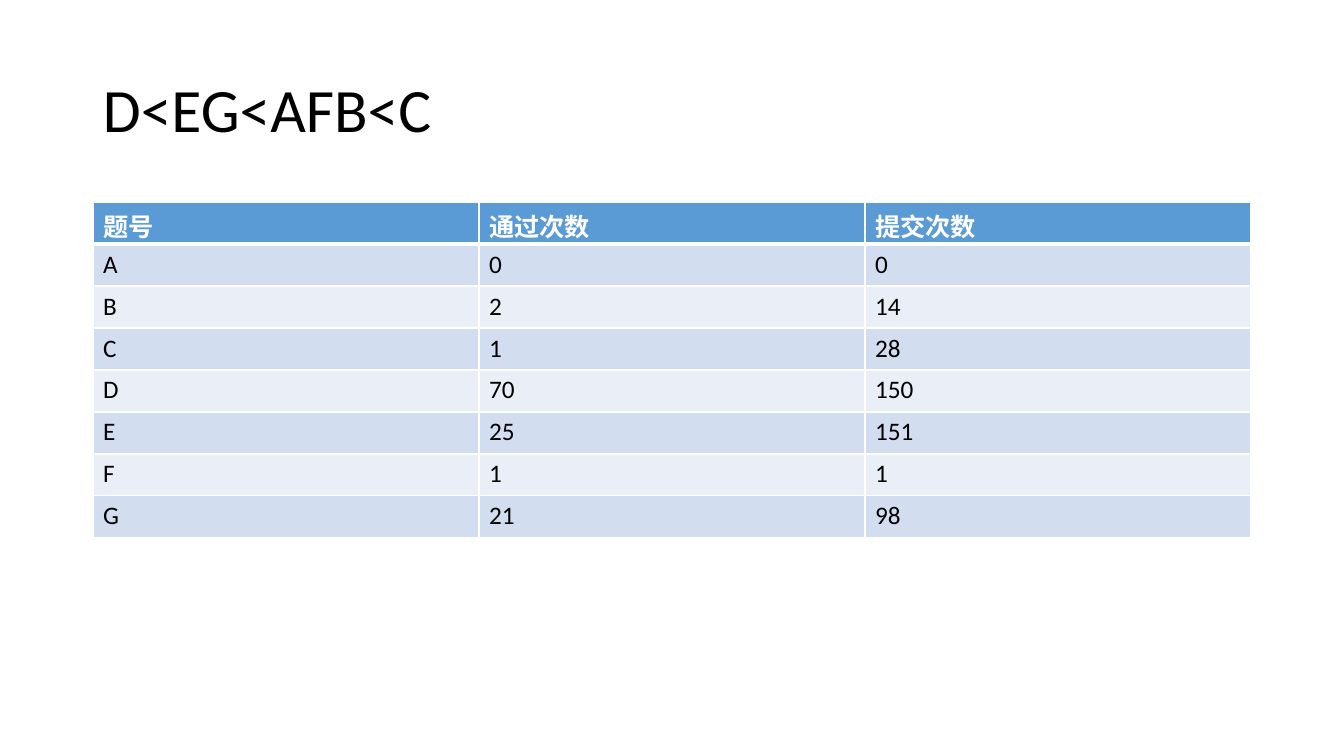
from lxml.etree import SubElement
from pptx import Presentation
from pptx.dml.color import RGBColor
from pptx.enum.text import MSO_ANCHOR
from pptx.oxml.ns import qn
from pptx.util import Emu, Pt

COLORS = {
    "black": "000000",
    "white": "FFFFFF",
    "header": "5B9BD5",
    "odd": "D2DEEF",
    "even": "EAEFF7",
}


def px(length):
    return Emu(round(length * 914400 / 100.8))


def write(frame, text, size=18, color="black", bold=False, spacing=1.0):
    paragraph = frame.paragraphs[0]
    paragraph.line_spacing = spacing
    run = paragraph.add_run()
    run.text = text
    run.font.name = "Calibri"
    run.font.size = Pt(size)
    run.font.bold = bold
    run.font.color.rgb = RGBColor.from_string(COLORS[color])


deck = Presentation()
deck.slide_width, deck.slide_height = px(1344), px(756)
slide = deck.slides.add_slide(deck.slide_layouts[6])

difficulty_order = slide.shapes.add_textbox(px(93), px(40), px(1159), px(146)).text_frame
difficulty_order.word_wrap = True
difficulty_order.vertical_anchor = MSO_ANCHOR.MIDDLE
write(difficulty_order, "D<EG<AFB<C", size=44, spacing=0.9)

results = [
    ("题号", "通过次数", "提交次数"),
    ("A", 0, 0),
    ("B", 2, 14),
    ("C", 1, 28),
    ("D", 70, 150),
    ("E", 25, 151),
    ("F", 1, 1),
    ("G", 21, 98),
]
submissions = slide.shapes.add_table(
    len(results), 3, px(93), px(202), px(3 * 386), px(len(results) * 42)
).table
for column in submissions.columns:
    column.width = px(386)

for row_index, result in enumerate(results):
    submissions.rows[row_index].height = px(42)
    is_header = row_index == 0
    fill = "header" if is_header else "odd" if row_index % 2 else "even"
    for column_index, value in enumerate(result):
        cell = submissions.cell(row_index, column_index)
        write(cell.text_frame, str(value), color="white" if is_header else "black", bold=is_header)
        properties = cell._tc.get_or_add_tcPr()
        for side in "LRTB":
            heavy = (row_index, side) in ((0, "B"), (1, "T"))
            border = SubElement(properties, qn(f"a:ln{side}"), w=str(Pt(3 if heavy else 1)))
            border_fill = SubElement(border, qn("a:solidFill"))
            SubElement(border_fill, qn("a:srgbClr"), val=COLORS["white"])
        cell.fill.solid()
        cell.fill.fore_color.rgb = RGBColor.from_string(COLORS[fill])

deck.save("out.pptx")
